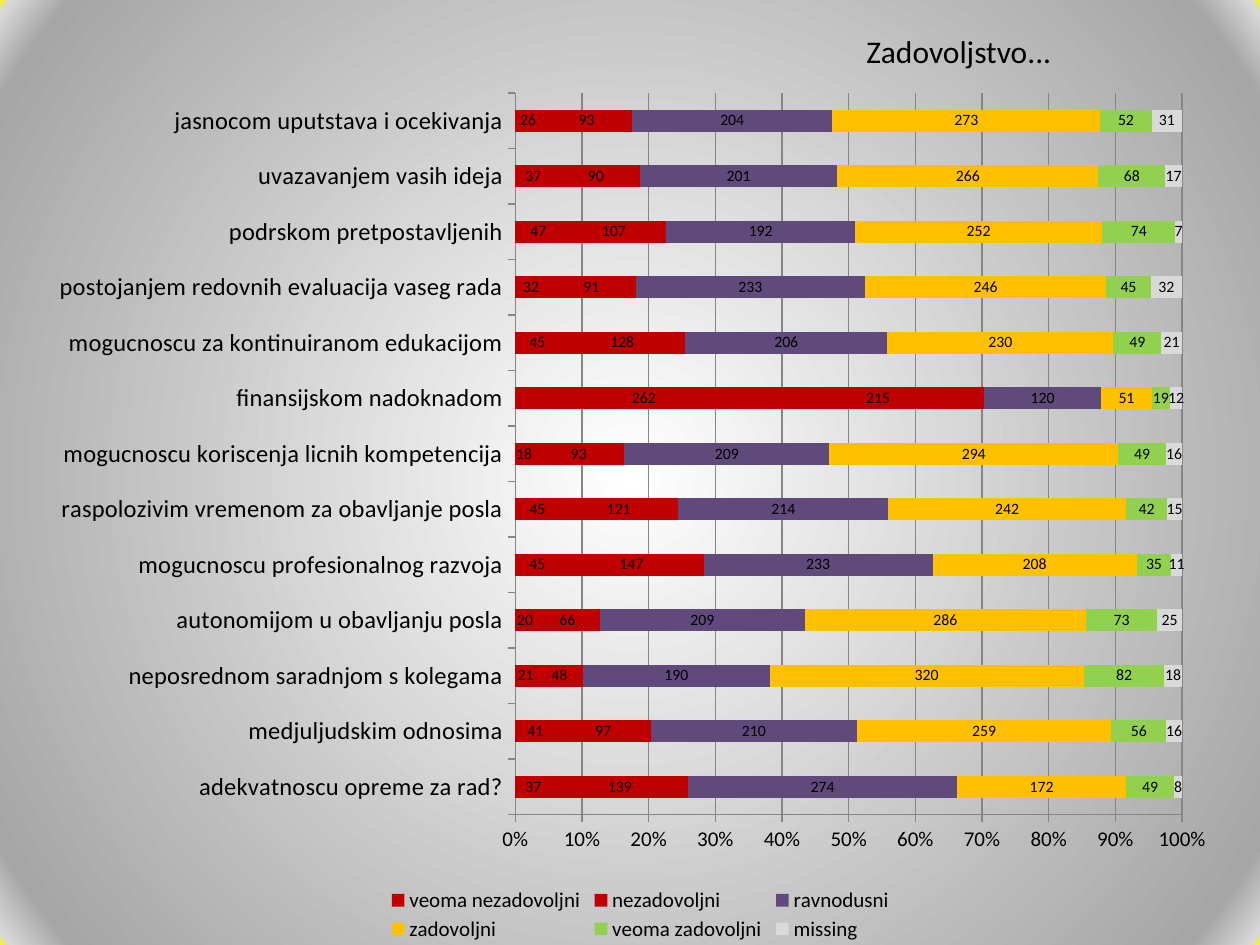
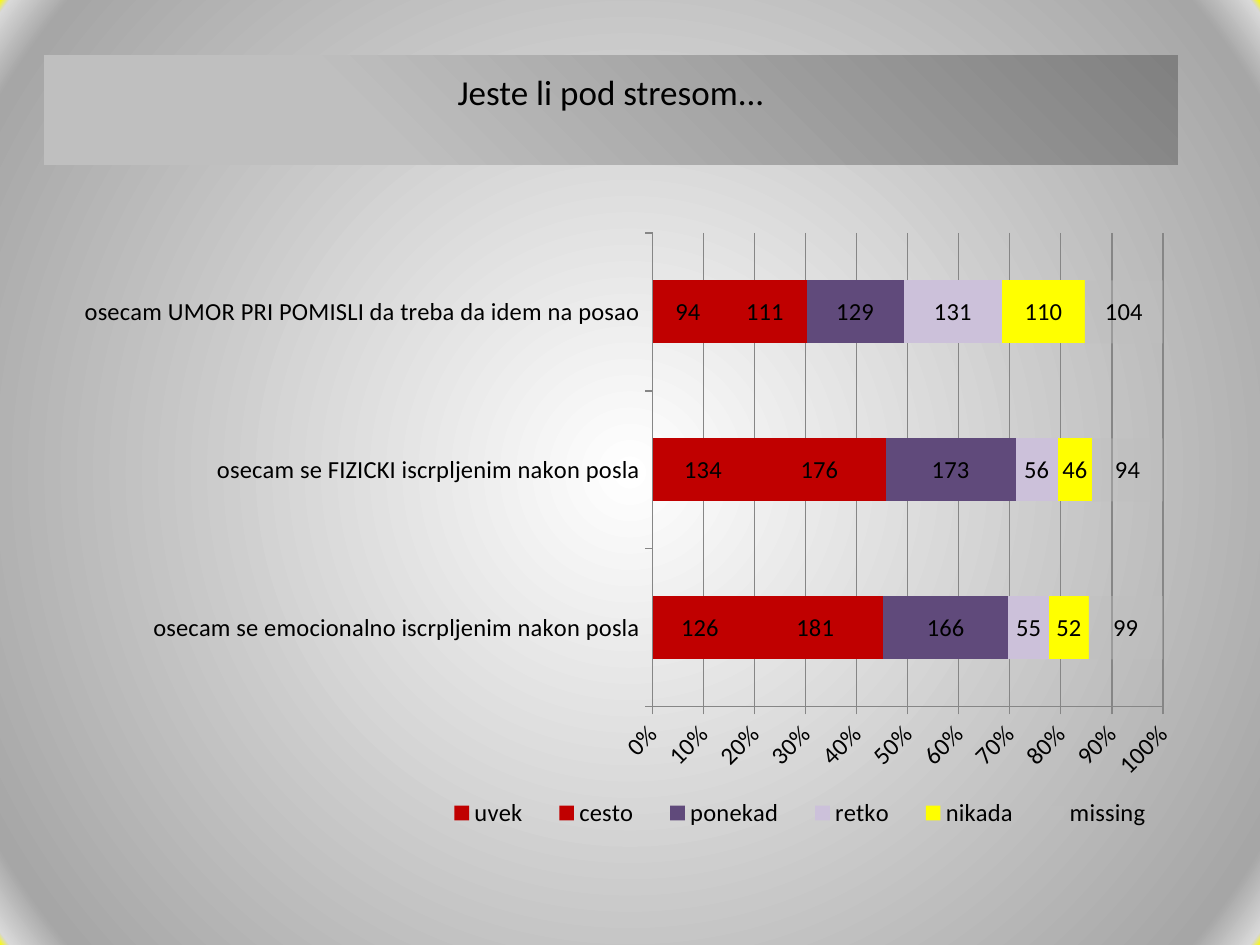
from lxml import etree
from pptx import Presentation
from pptx import util as u
from pptx.chart.data import CategoryChartData
from pptx.dml.color import RGBColor
from pptx.enum import chart as ch, shapes, text
from pptx.oxml.ns import qn

FONT = "Calibri"
COLORS = {
    "text": "000000", "axis": "868686", "red": "C00000", "purple": "604A7B",
    "amber": "FFC000", "green": "92D050", "pale": "D9D9D9", "lilac": "CCC1DA",
    "yellow": "FFFF00", "grey": "BFBFBF", "mid": "A6A6A6", "dark": "808080",
    "white": "FFFFFF", "scarlet": "FF0300",
}
BACKGROUND = [(0, "white"), (93, "mid"), (99, "pale"), (100, "yellow"), (100, "white")]
TITLE_BAND = [(29, "grey"), (100, "dark"), (100, "pale"), (100, "scarlet"), (100, "mid")]

SATISFACTION_TOPICS = [
    "adekvatnoscu opreme za rad?",
    "medjuljudskim odnosima",
    "neposrednom saradnjom s kolegama",
    "autonomijom u obavljanju posla",
    "mogucnoscu profesionalnog razvoja",
    "raspolozivim vremenom za obavljanje posla",
    "mogucnoscu koriscenja licnih kompetencija",
    "finansijskom nadoknadom",
    "mogucnoscu za kontinuiranom edukacijom",
    "postojanjem redovnih evaluacija vaseg rada",
    "podrskom pretpostavljenih",
    "uvazavanjem vasih ideja",
    "jasnocom uputstava i ocekivanja",
]
# answer, colour, counts per topic
SATISFACTION_ANSWERS = [
    ("veoma nezadovoljni", "red", [37, 41, 21, 20, 45, 45, 18, 262, 45, 32, 47, 37, 26]),
    ("nezadovoljni", "red", [139, 97, 48, 66, 147, 121, 93, 215, 128, 91, 107, 90, 93]),
    ("ravnodusni", "purple",
     [274, 210, 190, 209, 233, 214, 209, 120, 206, 233, 192, 201, 204]),
    ("zadovoljni", "amber",
     [172, 259, 320, 286, 208, 242, 294, 51, 230, 246, 252, 266, 273]),
    ("veoma zadovoljni", "green", [49, 56, 82, 73, 35, 42, 49, 19, 49, 45, 74, 68, 52]),
    ("missing", "pale", [8, 16, 18, 25, 11, 15, 16, 12, 21, 32, 7, 17, 31]),
]
STRESS_TOPICS = [
    "osecam se emocionalno iscrpljenim nakon posla",
    "osecam se FIZICKI iscrpljenim nakon posla",
    "osecam UMOR PRI POMISLI da treba da idem na posao",
]
STRESS_ANSWERS = [
    ("uvek", "red", [126, 134, 94]),
    ("cesto", "red", [181, 176, 111]),
    ("ponekad", "purple", [166, 173, 129]),
    ("retko", "lilac", [55, 56, 131]),
    ("nikada", "yellow", [52, 46, 110]),
    ("missing", "grey", [99, 94, 104]),
]


def rgb(name):
    return RGBColor.from_string(COLORS[name])


def inches(box):
    return [u.Inches(length) for length in box]


def set_format(target, **values):
    for key, value in values.items():
        setattr(target, key, value)


def style_font(font, size):
    set_format(font, name=FONT, size=u.Pt(size))
    font.color.rgb = rgb("text")


def radial_gradient(fill, element, stops, center):
    """Fill with rings around center, given as left, top, right, bottom percent."""
    fill.gradient()
    gradient = element.find(".//" + qn("a:gradFill"))
    gradient.clear()
    stop_list = etree.SubElement(gradient, qn("a:gsLst"))
    for position, color in stops:
        stop = etree.SubElement(stop_list, qn("a:gs"), pos=str(position * 1000))
        etree.SubElement(stop, qn("a:srgbClr"), val=COLORS[color])
    rings = etree.SubElement(gradient, qn("a:path"), path="circle")
    sides = {side: str(share * 1000) for side, share in zip("ltrb", center)}
    etree.SubElement(rings, qn("a:fillToRect"), **sides)


def add_slide(deck):
    slide = deck.slides.add_slide(deck.slide_layouts[6])
    radial_gradient(slide.background.fill, slide.element, BACKGROUND, (50, 50, 50, 50))
    return slide


def add_title(slide, wording, box, size, band=None, bottom=0.05):
    title = slide.shapes.add_shape(shapes.MSO_SHAPE.RECTANGLE, *inches(box))
    title.shadow.inherit = False
    title.line.fill.background()
    if band:
        radial_gradient(title.fill, title.element, band, (0, 100, 100, 0))
    else:
        title.fill.background()
    set_format(title.text_frame, word_wrap=True, margin_bottom=u.Inches(bottom),
               vertical_anchor=text.MSO_ANCHOR.MIDDLE)
    line = title.text_frame.paragraphs[0]
    set_format(line, text=wording, alignment=text.PP_ALIGN.CENTER)
    style_font(line.runs[0].font, size)


def place(part, box, inner=False):
    """Pin a chart part to left, top, width, height as shares of the chart."""
    for old in part.findall(qn("c:layout")):
        part.remove(old)
    layout = etree.Element(qn("c:layout"))
    manual = etree.SubElement(layout, qn("c:manualLayout"))
    settings = [("layoutTarget", "inner")] if inner else []
    settings += [("xMode", "edge"), ("yMode", "edge"), *zip("xywh", box)]
    for tag, value in settings:
        etree.SubElement(manual, qn("c:" + tag), val=str(value))
    position = 0 if inner else part.index(part.find(qn("c:legendPos"))) + 1
    part.insert(position, layout)


def style_axis(axis, size):
    axis.major_tick_mark = ch.XL_TICK_MARK.OUTSIDE
    axis.format.line.color.rgb = rgb("axis")
    axis.format.line.width = u.Pt(0.75)
    style_font(axis.tick_labels.font, size)


def add_answer_chart(slide, box, topics, answers, plot_box, legend_box, sizes):
    data = CategoryChartData()
    data.categories = topics
    for answer, _, counts in answers:
        data.add_series(answer, counts)
    chart = slide.shapes.add_chart(
        ch.XL_CHART_TYPE.BAR_STACKED_100, *inches(box), data).chart
    set_format(chart, has_title=False, has_legend=True)
    style_font(chart.font, sizes["topics"])

    set_format(chart.legend, position=ch.XL_LEGEND_POSITION.BOTTOM,
               include_in_layout=False)
    style_font(chart.legend.font, sizes["legend"])
    place(chart.legend._element, legend_box)

    plot = chart.plots[0]
    set_format(plot, gap_width=150, overlap=100, vary_by_categories=False)
    place(chart._chartSpace.chart.plotArea, plot_box, inner=True)
    for series, (_, color, _) in zip(plot.series, answers):
        series.format.fill.solid()
        series.format.fill.fore_color.rgb = rgb(color)
        series.data_labels.show_value = True
        style_font(series.data_labels.font, sizes["counts"])

    style_axis(chart.category_axis, sizes["topics"])
    shares = chart.value_axis
    style_axis(shares, sizes["shares"])
    set_format(shares, minimum_scale=0, maximum_scale=1, major_unit=0.1,
               has_major_gridlines=True)
    set_format(shares.tick_labels, number_format="0%", number_format_is_linked=False)
    set_format(shares.major_gridlines.format.line, width=u.Pt(0.75))
    shares.major_gridlines.format.line.color.rgb = rgb("axis")
    return chart


def fade(series, percent):
    color = series._element.spPr.find(".//" + qn("a:srgbClr"))
    etree.SubElement(color, qn("a:alpha"), val=str(percent * 1000))


def tilt_labels(axis, degrees):
    body = axis._element.find(qn("c:txPr")).find(qn("a:bodyPr"))
    body.set("rot", str(degrees * 60000))
    body.set("vert", "horz")


def main():
    deck = Presentation()
    set_format(deck, slide_width=u.Inches(10), slide_height=u.Inches(7.5))

    satisfaction = add_slide(deck)
    add_title(satisfaction, "Zadovoljstvo...", (5.71, 0.21, 3.8, 0.39), 18)
    add_answer_chart(
        satisfaction, (0.31, 0.6, 9.45, 6.9), SATISFACTION_TOPICS, SATISFACTION_ANSWERS,
        plot_box=(0.4, 0.02, 0.56, 0.83), legend_box=(0.29, 0.93, 0.43, 0.07),
        sizes={"topics": 14, "shares": 12, "legend": 12, "counts": 9})

    stress = add_slide(deck)
    add_title(stress, "Jeste li pod stresom...", (0.35, 0.44, 9, 0.87), 20,
              band=TITLE_BAND, bottom=0.34)
    stress_chart = add_answer_chart(
        stress, (0.5, 1.75, 9, 4.95), STRESS_TOPICS, STRESS_ANSWERS,
        plot_box=(0.52, 0.02, 0.45, 0.76), legend_box=(0.32, 0.91, 0.66, 0.08),
        sizes=dict.fromkeys(["topics", "shares", "legend", "counts"], 14))
    fade(stress_chart.plots[0].series[-1], 37)
    tilt_labels(stress_chart.value_axis, -45)

    deck.save("out.pptx")


if __name__ == "__main__":
    main()
